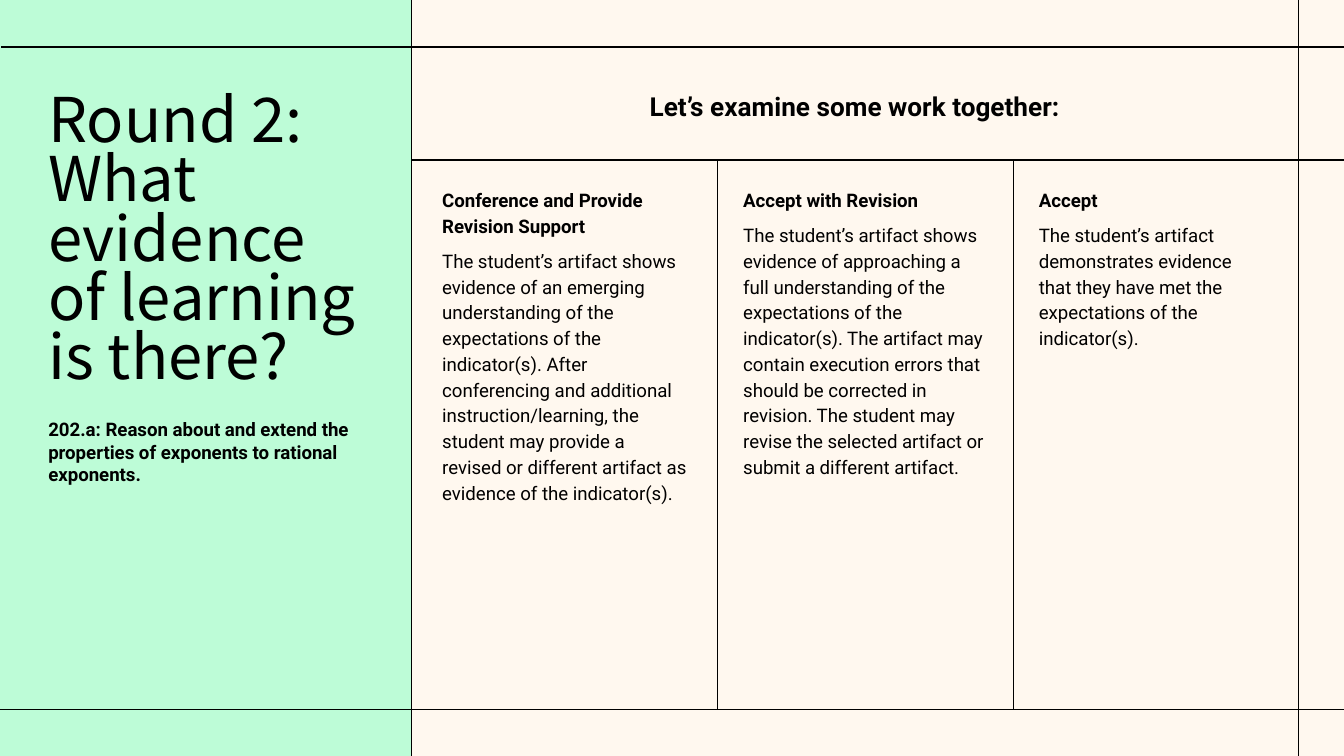
from dataclasses import dataclass

from lxml import etree
from pptx import Presentation
from pptx.dml.color import RGBColor
from pptx.enum.shapes import MSO_CONNECTOR, MSO_SHAPE
from pptx.enum.text import MSO_ANCHOR, MSO_AUTO_SIZE, PP_ALIGN
from pptx.oxml.ns import qn
from pptx.util import Inches, Pt

STRAIGHT = MSO_CONNECTOR.STRAIGHT
RECTANGLE = MSO_SHAPE.RECTANGLE
TOP = MSO_ANCHOR.TOP
GROW = MSO_AUTO_SIZE.SHAPE_TO_FIT_TEXT
LEFT, CENTER = PP_ALIGN.LEFT, PP_ALIGN.CENTER
TITLE_ONLY = 5


@dataclass(frozen=True)
class Theme:
    ink: RGBColor = RGBColor(0x00, 0x00, 0x00)
    background: RGBColor = RGBColor(0xFF, 0xF8, 0xEF)
    panel: RGBColor = RGBColor(0xBD, 0xFC, 0xD7)
    title_font: str = "Noto Sans CJK KR"
    body_font: str = "Roboto"
    title_size: float = 33
    heading_size: float = 14
    body_size: float = 10
    rule_width: float = 0.75


THEME = Theme()

# Page grid, in inches, on a 16:9 page
WIDTH = 10
HEIGHT = WIDTH * 9 / 16
BLEED = 0.01
PANEL_EDGE, RIGHT_RULE = 3.06, 9.66
TOP_RULE, HEADER_RULE, BOTTOM_RULE = 0.35, 1.19, 5.28
DIVIDERS = (5.34, 7.54)
PANEL_TEXT_LEFT, PANEL_TEXT_WIDTH = 0.36, 2.37
COLUMN_TOP, COLUMN_WIDTH = 1.38, 1.82

# Left edge, heading, description and text height; \v is a line break
COLUMNS = (
    (3.29, "Conference and Provide Revision Support",
     "The student’s artifact shows evidence of an emerging understanding of "
     "the expectations of the indicator(s). After conferencing and additional "
     "instruction/learning, the student may provide a revised or different "
     "artifact as evidence of the indicator(s).", 2.56),
    (5.53, "Accept with Revision",
     "The student’s artifact shows evidence of approaching a full "
     "understanding of the expectations of the indicator(s). The artifact may "
     "contain execution errors that should be corrected in revision. The "
     "student may revise the selected artifact or submit a different "
     "artifact.", 2.37),
    (7.73, "Accept",
     "The student’s artifact demonstrates evidence \vthat they have met the "
     "expectations of the indicator(s).", 1.21),
)


def add_rule(page, x1, y1, x2, y2):
    rule = page.shapes.add_connector(
        STRAIGHT, Inches(x1), Inches(y1), Inches(x2), Inches(y2))
    rule.line.color.rgb = THEME.ink
    rule.line.width = Pt(THEME.rule_width)
    etree.SubElement(rule._element.spPr, qn("a:effectLst"))


def add_panel(page):
    panel = page.shapes.add_shape(
        RECTANGLE, 0, 0, Inches(PANEL_EDGE), Inches(HEIGHT))
    panel.shadow.inherit = False
    panel.fill.solid()
    panel.fill.fore_color.rgb = THEME.panel
    panel.line.fill.background()


def place(box, left, top, width, height):
    box.left, box.top = Inches(left), Inches(top)
    box.width, box.height = Inches(width), Inches(height)
    frame = box.text_frame
    frame.margin_left = frame.margin_right = 0
    frame.margin_top = frame.margin_bottom = 0
    frame.word_wrap = True
    frame.auto_size = GROW
    frame.vertical_anchor = TOP


def write(para, text, *, size=THEME.body_size, font=THEME.body_font,
          bold=False, align=LEFT, line_spacing=1.0, space=0):
    para.text = text
    para.alignment = align
    para.line_spacing = line_spacing
    para.space_before = para.space_after = Pt(space)
    for span in para.runs:
        span.font.name = font
        span.font.size = Pt(size)
        span.font.bold = bold
        span.font.color.rgb = THEME.ink


def add_text_box(page, left, top, width, height):
    box = page.shapes.add_textbox(0, 0, 0, 0)
    place(box, left, top, width, height)
    return box.text_frame


def set_title(page, lines):
    title = page.shapes.title
    place(title, PANEL_TEXT_LEFT, 0.71, PANEL_TEXT_WIDTH, 2.22)
    frame = title.text_frame
    for index, line in enumerate(lines):
        para = frame.add_paragraph() if index else frame.paragraphs[0]
        write(para, line, size=THEME.title_size, font=THEME.title_font,
              line_spacing=0.8)
    # Bring the title in front of the panel
    page.shapes._spTree.append(title._element)


def add_column(page, left, heading, description, height):
    frame = add_text_box(page, left, COLUMN_TOP, COLUMN_WIDTH, height)
    write(frame.paragraphs[0], heading, bold=True, line_spacing=1.15)
    write(frame.add_paragraph(), description, line_spacing=1.15, space=5)


def main():
    deck = Presentation()
    deck.slide_width, deck.slide_height = Inches(WIDTH), Inches(HEIGHT)
    page = deck.slides.add_slide(deck.slide_layouts[TITLE_ONLY])
    page.background.fill.solid()
    page.background.fill.fore_color.rgb = THEME.background

    # Header rule passes behind the panel
    add_rule(page, BLEED, HEADER_RULE, WIDTH + BLEED, HEADER_RULE)
    add_panel(page)

    # Frame and column rules
    add_rule(page, BLEED, TOP_RULE, WIDTH + BLEED, TOP_RULE)
    add_rule(page, -BLEED, BOTTOM_RULE, WIDTH + BLEED, BOTTOM_RULE)
    for x in (PANEL_EDGE, RIGHT_RULE):
        add_rule(page, x, -BLEED, x, HEIGHT + BLEED)
    for x in DIVIDERS:
        add_rule(page, x, HEADER_RULE, x, BOTTOM_RULE)

    # Panel text
    set_title(page, ("Round 2:", "What evidence of learning is there?"))
    standard = add_text_box(page, PANEL_TEXT_LEFT, 3.11, PANEL_TEXT_WIDTH, 0.5)
    write(standard.paragraphs[0],
          "202.a: Reason about and extend the properties of exponents to "
          "rational exponents.", bold=True)

    # Header and rating columns
    header = add_text_box(page, 3.41, 0.67, 5.9, 0.24)
    write(header.paragraphs[0], "Let’s examine some work together:",
          size=THEME.heading_size, bold=True, align=CENTER)
    for column in COLUMNS:
        add_column(page, *column)

    deck.save("out.pptx")


if __name__ == "__main__":
    main()
